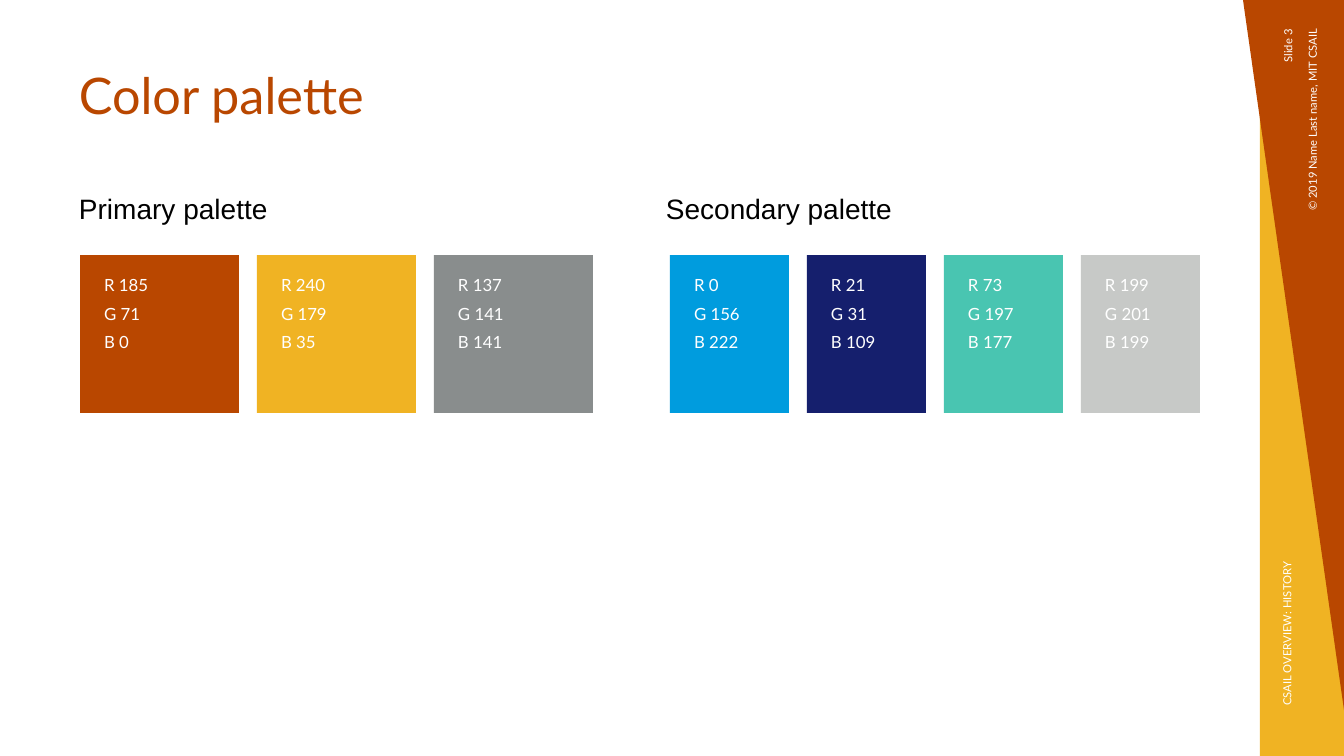
import pptx
import pptx.dml.color
import pptx.enum.shapes
import pptx.enum.text
import pptx.util

COLORS = {
    "rust": "B94700",
    "gold": "F0B323",
    "gray": "898D8D",
    "blue": "009CDE",
    "navy": "151F6D",
    "teal": "49C5B1",
    "silver": "C7C9C7",
    "white": "FFFFFF",
    "black": "000000",
}
EMU_PER_PIXEL = 914400 / 100.8
SWATCH_TOP = 255
SWATCH_HEIGHT = 158
SWATCH_GAP = 18
ALIGN = pptx.enum.text.PP_ALIGN
ANCHOR = pptx.enum.text.MSO_ANCHOR


def px(length):
    return pptx.util.Emu(round(length * EMU_PER_PIXEL))


def rgb(color):
    return pptx.dml.color.RGBColor.from_string(COLORS[color])


def paint(shape, color):
    shape.shadow.inherit = False
    shape.fill.solid()
    shape.fill.fore_color.rgb = rgb(color)
    shape.line.fill.background()


def set_font(paragraph, size, color, name="Lato"):
    paragraph.font.size = pptx.util.Pt(size)
    paragraph.font.name = name
    paragraph.font.color.rgb = rgb(color)


def add_rectangle(slide, left, top, width, height, color):
    shape = slide.shapes.add_shape(
        pptx.enum.shapes.MSO_SHAPE.RECTANGLE, px(left), px(top), px(width), px(height)
    )
    paint(shape, color)
    return shape


def add_triangle(slide, points, color):
    corners = [(px(x), px(y)) for x, y in points]
    builder = slide.shapes.build_freeform(*corners[0])
    builder.add_line_segments(corners[1:], close=True)
    paint(builder.convert_to_shape(), color)


def add_text(slide, text, left, top, width, height, size, color, name="Lato"):
    box = slide.shapes.add_textbox(px(left), px(top), px(width), px(height))
    box.text_frame.word_wrap = True
    paragraph = box.text_frame.paragraphs[0]
    paragraph.text = text
    set_font(paragraph, size, color, name)
    return box


def add_side_text(slide, text, left, top, width, alignment):
    box = add_text(slide, text, left, top, width, 35, 8, "white")
    box.rotation = 270
    box.text_frame.vertical_anchor = ANCHOR.MIDDLE
    box.text_frame.paragraphs[0].alignment = alignment
    return box


def add_swatch(slide, left, width, color):
    swatch = add_rectangle(slide, left, SWATCH_TOP, width, SWATCH_HEIGHT, color)
    frame = swatch.text_frame
    frame.word_wrap = True
    frame.vertical_anchor = ANCHOR.TOP
    frame.margin_left = px(24)
    frame.margin_top = px(20)
    frame.text = "\n".join(f"{letter} {value}" for letter, value in zip("RGB", rgb(color)))
    for index, paragraph in enumerate(frame.paragraphs):
        paragraph.alignment = ALIGN.LEFT
        paragraph.space_before = pptx.util.Pt(6 if index else 0)
        set_font(paragraph, 12, "white")


def add_palette(slide, heading, heading_left, swatch_left, swatch_width, colors):
    add_text(slide, heading, heading_left, 187, 535, 43, 20, "black", "Arial")
    for index, color in enumerate(colors):
        left = swatch_left + index * (swatch_width + SWATCH_GAP)
        add_swatch(slide, left, swatch_width, color)


def main():
    presentation = pptx.Presentation()
    presentation.slide_width = px(1344)
    presentation.slide_height = px(756)
    slide = presentation.slides.add_slide(presentation.slide_layouts[6])

    add_rectangle(slide, 1260, 0, 84, 756, "gold")
    add_triangle(slide, [(1243, 0), (1344, 710), (1344, 0)], "rust")

    title = add_text(slide, "Color palette", 69, 66, 1123, 110, 36, "rust")
    title.text_frame.paragraphs[0].line_spacing = 0.9

    add_palette(slide, "Primary palette", 69, 80, 159, ["rust", "gold", "gray"])
    add_palette(
        slide, "Secondary palette", 656, 670, 119, ["blue", "navy", "teal", "silver"]
    )

    add_side_text(slide, "CSAIL OVERVIEW: HISTORY", 1136, 547, 302, ALIGN.LEFT)
    add_side_text(slide, "© 2019 Name Last name, MIT CSAIL", 1189, 125, 247, ALIGN.RIGHT)
    number = add_side_text(slide, "Slide 3", 1214, 76, 148, ALIGN.RIGHT)
    number.text_frame.margin_left = 0

    presentation.save("out.pptx")


if __name__ == "__main__":
    main()
